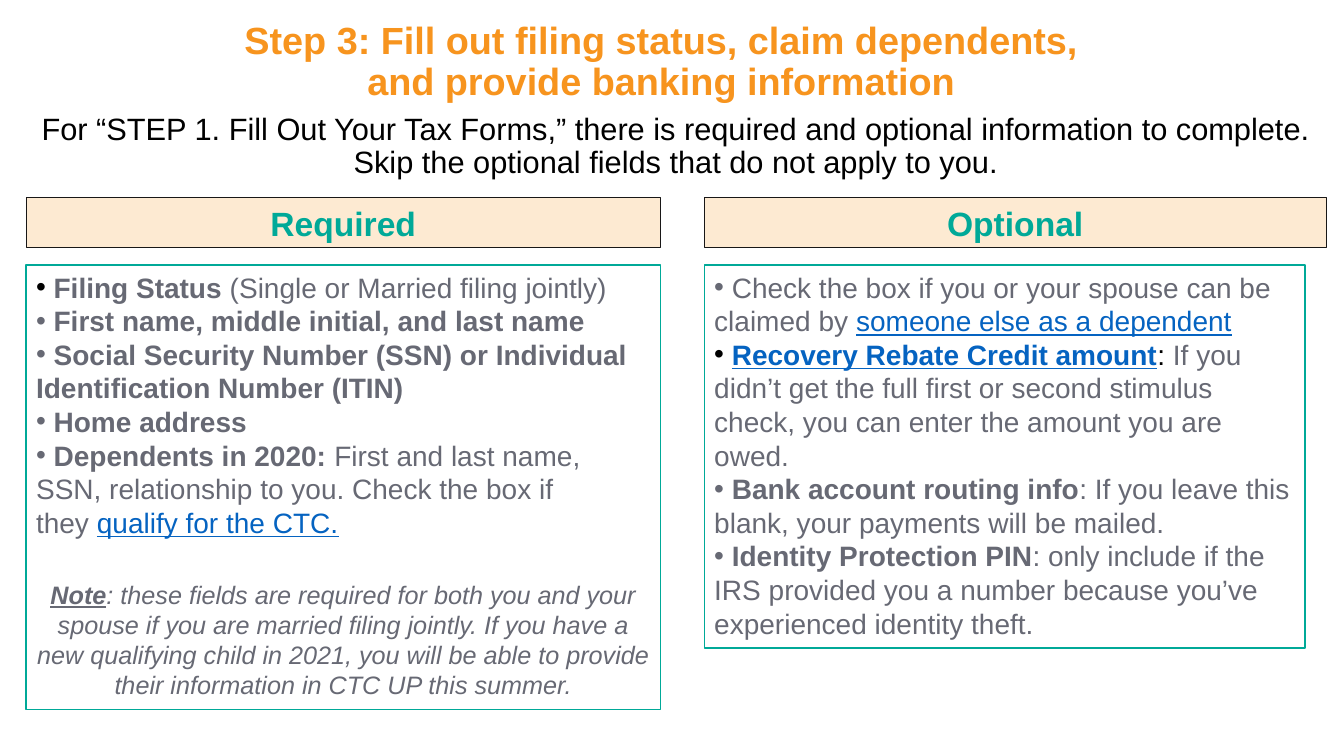
from lxml import etree
from pptx import Presentation, util as u
from pptx.dml.color import RGBColor
from pptx.enum import shapes, text
from pptx.oxml.ns import qn

COLORS = {
    "orange": "F7941E", "black": "000000", "teal": "00A998", "peach": "FDEAD2",
    "ink": "181717", "grey": "676974", "blue": "0563C1", "white": "FFFFFF",
}
TITLE = "Step 3: Fill out filing status, claim dependents, and provide banking information"
INTRO = ("For “STEP 1. Fill Out Your Tax Forms,” there is required and optional information "
         "to complete. Skip the optional fields that do not apply to you.")

PLAIN = ("grey", "")
BOLD = ("grey", "b")
BLACK = ("black", "")
LINK = ("blue", "u")

REQUIRED = [
    [(" ", ("black", "b")), ("Filing Status", BOLD),
     ("\u00a0(Single or Married filing jointly)", PLAIN)],
    [(" First name, middle initial, and last name", BOLD)],
    [(" Social Security Number (SSN) or Individual Identification Number (ITIN)", BOLD)],
    [(" Home address", BOLD)],
    [(" Dependents in 2020:", BOLD),
     ("\u00a0First and last name, SSN, relationship to you. Check the box if they\u00a0", PLAIN),
     ("qualify for the CTC.", LINK)],
]
NOTE = [
    ("Note", ("grey", "biu")),
    (": these fields are required for both you and your spouse if you are married filing "
     "jointly. If you have a new qualifying child in 2021, you will be able to provide "
     "their information in CTC UP this summer.", ("grey", "i")),
]
OPTIONAL = [
    [(" Check the box if you or your spouse can be claimed by ", PLAIN),
     ("someone else as a dependent", LINK)],
    [(" ", BLACK), ("Recovery Rebate Credit amount", ("blue", "bu")), (": ", BLACK),
     ("If you didn’t get the full first or second stimulus check, you can enter "
      "the amount you are owed.", PLAIN)],
    [(" ", PLAIN), ("Bank account routing info", BOLD),
     (": If you leave this blank, your payments will be mailed.", PLAIN)],
    [(" ", PLAIN), ("Identity Protection PIN", BOLD),
     (": only include if the IRS provided you a number because you’ve experienced "
      "identity theft.", PLAIN)],
]
COLUMNS = [
    {"heading": "Required", "left": 0.66, "heading_width": 15.98,
     "list_width": 15.98, "list_height": 11.2, "items": REQUIRED, "note": NOTE},
    {"heading": "Optional", "left": 17.75, "heading_width": 15.67,
     "list_width": 15.14, "list_height": 9.65, "items": OPTIONAL, "note": None},
]
HEADING_TOP, HEADING_HEIGHT, LIST_TOP = 4.98, 1.27, 6.68


def rgb(name):
    return RGBColor.from_string(COLORS[name])


def write(paragraph, runs, size, align=text.PP_ALIGN.LEFT, bullet=False):
    properties = paragraph._p.get_or_add_pPr()
    properties.set("marL", "0")
    properties.set("indent", "0")
    if bullet:
        etree.SubElement(properties, qn("a:buFont")).set("typeface", "Arial")
        etree.SubElement(properties, qn("a:buChar")).set("char", "•")
    else:
        etree.SubElement(properties, qn("a:buNone"))
    paragraph.alignment = align
    paragraph.space_before = u.Pt(0)
    for words, (color, style) in runs:
        run = paragraph.add_run()
        run.text = words
        run.font.name = "Arial"
        run.font.size = u.Pt(size)
        run.font.color.rgb = rgb(color)
        run.font.bold = "b" in style
        run.font.italic = "i" in style
        run.font.underline = "u" in style


def fill_placeholder(holder, box, runs, size):
    holder.left, holder.top, holder.width, holder.height = map(u.Cm, box)
    frame = holder.text_frame
    frame.word_wrap = True
    frame.auto_size = text.MSO_AUTO_SIZE.NONE
    frame.vertical_anchor = text.MSO_ANCHOR.TOP
    write(frame.paragraphs[0], runs, size, text.PP_ALIGN.CENTER)
    frame.paragraphs[0].line_spacing = 0.9


def add_panel(slide, box, fill, line, weight):
    panel = slide.shapes.add_shape(shapes.MSO_SHAPE.RECTANGLE, *map(u.Cm, box))
    panel.shadow.inherit = False
    panel.fill.solid()
    panel.fill.fore_color.rgb = rgb(fill)
    panel.line.color.rgb = rgb(line)
    panel.line.width = u.Pt(weight)
    panel.text_frame.word_wrap = True
    panel.text_frame.vertical_anchor = text.MSO_ANCHOR.TOP
    return panel.text_frame


def add_column(slide, column):
    heading = add_panel(
        slide, (column["left"], HEADING_TOP, column["heading_width"], HEADING_HEIGHT),
        "peach", "ink", 0.75)
    write(heading.paragraphs[0], [(column["heading"], ("teal", "b"))], 24,
          text.PP_ALIGN.CENTER)

    details = add_panel(
        slide, (column["left"], LIST_TOP, column["list_width"], column["list_height"]),
        "white", "teal", 1)
    for index, item in enumerate(column["items"]):
        paragraph = details.add_paragraph() if index else details.paragraphs[0]
        write(paragraph, item, 20, bullet=True)
    if column["note"]:
        note = details.add_paragraph()
        write(note, column["note"], 18, text.PP_ALIGN.CENTER)
        note.space_before = u.Pt(28.5)


def main():
    deck = Presentation()
    deck.slide_width, deck.slide_height = u.Cm(33.87), u.Cm(19.05)
    slide = deck.slides.add_slide(deck.slide_layouts[1])
    fill_placeholder(slide.shapes.title, (5.21, 0.43, 22.91, 1.96),
                     [(TITLE, ("orange", "b"))], 27)
    fill_placeholder(slide.placeholders[1], (0.66, 2.74, 32.74, 2.54),
                     [(INTRO, BLACK)], 22)
    for column in COLUMNS:
        add_column(slide, column)
    deck.save("out.pptx")


if __name__ == "__main__":
    main()
